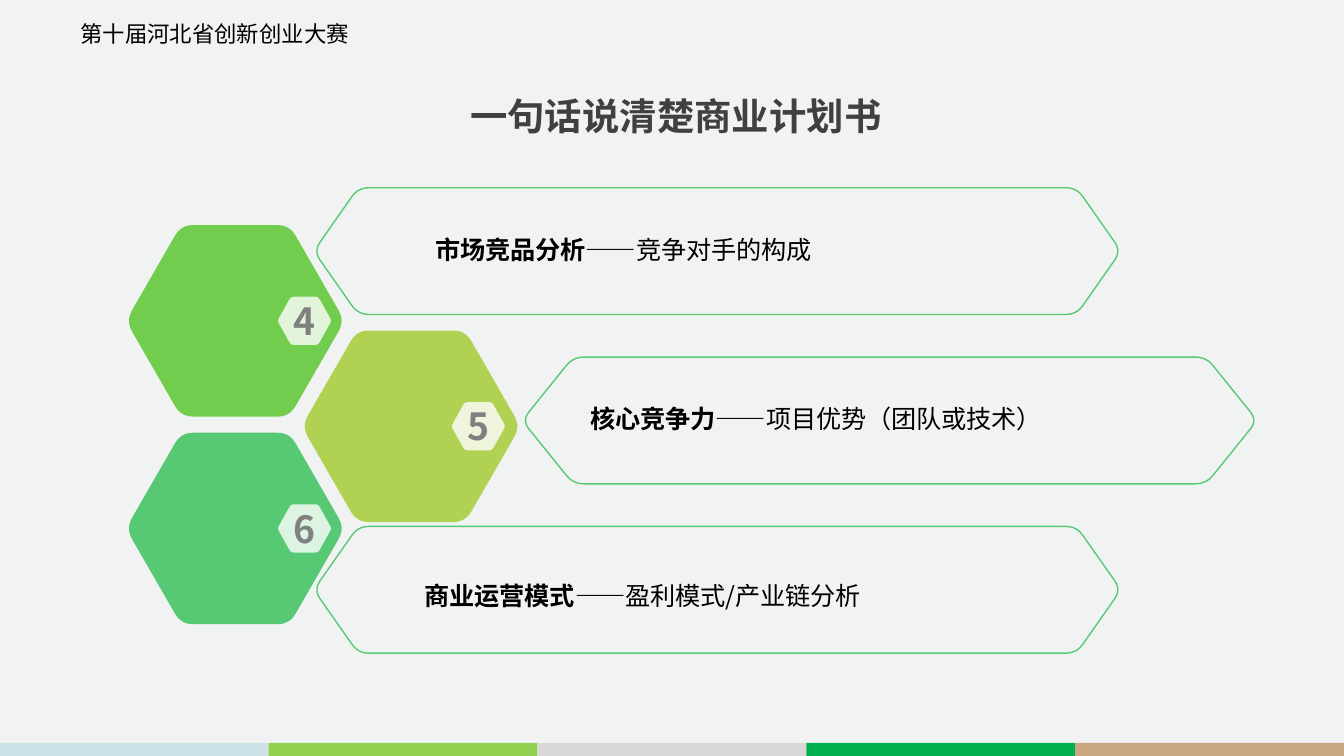
from math import hypot
from lxml.etree import SubElement as Sub
from pptx import Presentation
from pptx.dml.color import RGBColor as Rgb
from pptx.enum.shapes import MSO_SHAPE as Kind
from pptx.enum.text import PP_ALIGN as Align
from pptx.oxml.ns import qn
from pptx.util import Inches, Pt

HEX = {
    "back": "F1F3F2", "ink": "000000", "title": "404040", "digit": "808080",
    "leaf": "72CD4F", "lime": "B1D153", "mint": "57C873", "white": "FFFFFF",
    "ice": "CDE2E7", "grass": "92D050", "ash": "D8D8D8", "green": "00B050",
    "tan": "CAA884",
}
INK = {name: Rgb.from_string(code) for name, code in HEX.items()}
SANS = "Noto Sans CJK SC"

deck = Presentation()
deck.slide_width = Inches(10)
deck.slide_height = deck.slide_width * 9 // 16
slide = deck.slides.add_slide(deck.slide_layouts[6])
slide.background.fill.solid()
slide.background.fill.fore_color.rgb = INK["back"]
shapes = slide.shapes
CELL = deck.slide_width / 100  # the slide is 100 columns wide


def hexa(x, y, wide, high, slant, cut, fill=None):
    """Draw a hexagon whose corners are rounded from `cut` before to `cut` after."""
    out = cut * slant / hypot(slant, high / 2) / 2
    left, right, low, mid = x - out, x + wide + out, y + high, y + high / 2
    tips = [(left, mid), (left + slant, y), (right - slant, y),
            (right, mid), (right - slant, low), (left + slant, low)]
    dots = []
    for i, (cx, cy) in enumerate(tips):
        ends = []
        for nx, ny in (tips[i - 1], tips[(i + 1) % 6]):
            part = cut / hypot(nx - cx, ny - cy)
            ends.append((cx + (nx - cx) * part, cy + (ny - cy) * part))
        (ax, ay), (bx, by) = ends
        for t in (0, 0.2, 0.4, 0.6, 0.8, 1):
            a, c, b = (1 - t) ** 2, 2 * t * (1 - t), t * t
            dots.append(((a * ax + c * cx + b * bx) * CELL,
                         (a * ay + c * cy + b * by) * CELL))
    form = shapes.build_freeform(*dots[0], scale=1.0)
    form.add_line_segments(dots[1:], close=True)
    shape = form.convert_to_shape()
    shape.shadow.inherit = False
    if fill:
        shape.fill.solid()
        shape.fill.fore_color.rgb = INK[fill]
        shape.line.fill.background()
    else:
        shape.fill.background()
        shape.line.color.rgb = INK["mint"]
        shape.line.width = Pt(0.75)
    return shape


def write(x, y, wide, high, runs, size, ink, font=SANS, inset=True, wrap=True):
    """Add a one-paragraph text box; runs are (text, bold) pairs."""
    box = shapes.add_textbox(*(int(n * CELL) for n in (x, y, wide, high)))
    frame = box.text_frame
    frame.word_wrap = wrap
    if not inset:
        frame.margin_left = frame.margin_right = 0
        frame.margin_top = frame.margin_bottom = 0
    para = frame.paragraphs[0]
    para.font.name, para.font.size = font, Pt(size)
    para.font.color.rgb = INK[ink]
    Sub(para.font._element, qn("a:ea"), typeface=SANS)
    for text, bold in runs:
        run = para.add_run()
        run.text, run.font.bold = text, bold
    return para


# Footer stripes
for i, name in enumerate(("ice", "grass", "ash", "green", "tan")):
    stripe = shapes.add_shape(Kind.RECTANGLE, int(i * 20 * CELL), int(55.28 * CELL),
                              int(20 * CELL), int(0.97 * CELL))
    stripe.shadow.inherit = False
    stripe.fill.solid()
    stripe.fill.fore_color.rgb = INK[name]
    stripe.line.fill.background()

write(5, 1, 55.6, 3, [("第十届河北省创新创业大赛", False)], 12, "ink", "Calibri")

# Honeycomb: number, corner, badge column, colour
combs = [("4", 9.6, 16.75, 20.7, "leaf"), ("5", 22.68, 24.6, 33.63, "lime"),
         ("6", 9.6, 32.2, 20.7, "mint")]
for digit, x, y, spot, name in combs:
    hexa(x, y, 15.82, 14.25, 4.1, 0.9, name)

# Outlined bars, one every 12.6 rows
bars = [
    (23.58, 59.6, 3.3, 32.4, 17.75, "市场竞品分析", "——竞争对手的构成"),
    (39.1, 54.2, 3.8, 43.94, 30.3, "核心竞争力", "——项目优势（团队或技术）"),
    (23.58, 59.6, 3.3, 31.6, 43.5, "商业运营模式", "——盈利模式/产业链分析"),
]
for i, (x, wide, slant, tx, ty, head, tail) in enumerate(bars):
    hexa(x, 13.97 + 12.6 * i, wide, 9.43, slant, 0.8)
    para = write(tx, ty, 48, 2, [(head, True), (tail, False)], 13.5, "ink", inset=False)
    para.alignment = Align.JUSTIFY
    para.line_spacing = Pt(14)

# Number badges
for digit, x, y, spot, name in combs:
    badge = hexa(spot, y + 5.33, 3.92, 3.58, 1, 0.22, "white")
    tint = badge.fill._xPr.find(".//" + qn("a:srgbClr"))
    Sub(tint, qn("a:alpha"), val="80000")
    para = write(spot + 0.86, y + 5.43, 2.2, 3.4, [(digit, True)], 20, "digit",
                 inset=False, wrap=False)
    para.alignment = Align.CENTER

write(34, 6.44, 32.6, 4.4, [("一句话说清楚商业计划书", True)], 20, "title")

deck.save("out.pptx")
